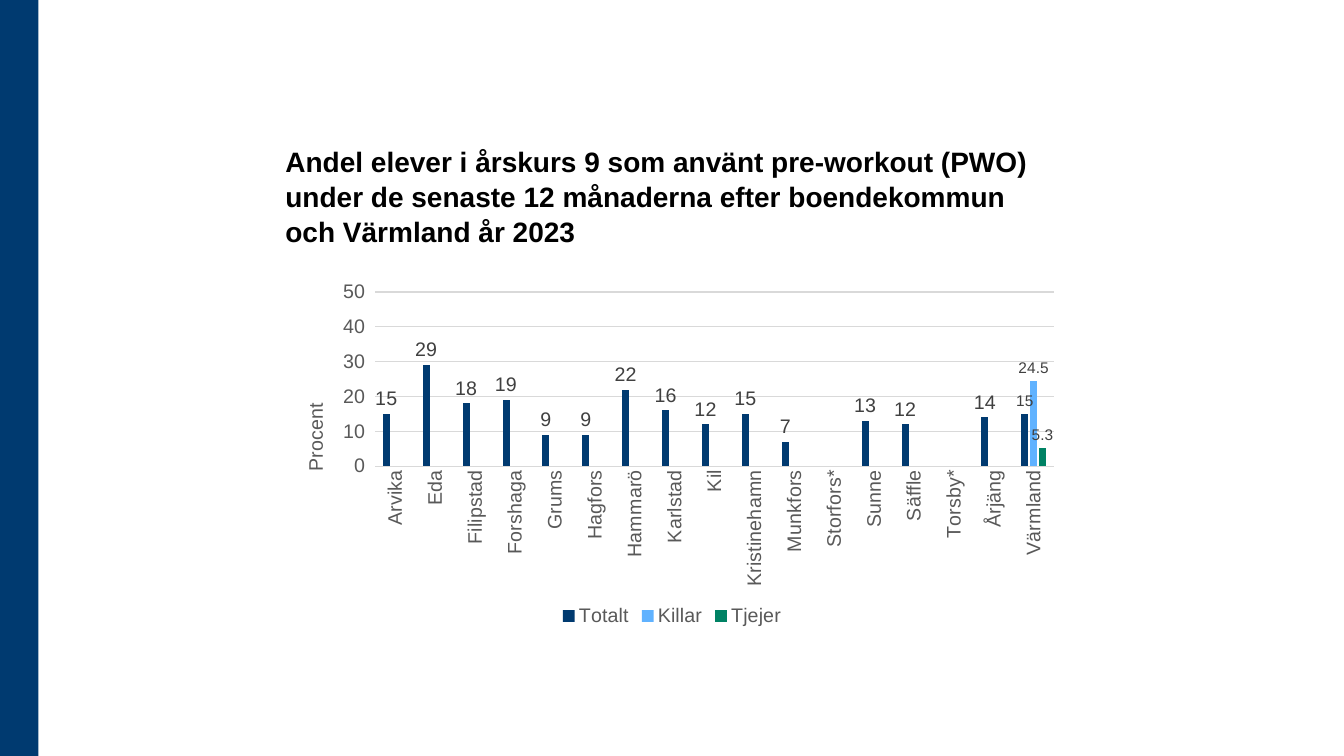
from dataclasses import dataclass

from lxml import etree
from pptx import Presentation
from pptx.chart.data import CategoryChartData
from pptx.dml.color import RGBColor
from pptx.enum.chart import XL_CHART_TYPE as ChartType
from pptx.enum.chart import XL_LABEL_POSITION as LabelPosition
from pptx.enum.chart import XL_LEGEND_POSITION as LegendPosition
from pptx.enum.chart import XL_TICK_MARK as TickMark
from pptx.enum.shapes import MSO_SHAPE
from pptx.enum.text import MSO_ANCHOR, MSO_AUTO_SIZE, PP_ALIGN
from pptx.oxml.ns import qn
from pptx.util import Inches, Pt


@dataclass(frozen=True)
class Theme:
    font: str = "Arial"
    navy: str = "003A70"
    sky: str = "60B2FF"
    green: str = "008264"
    black: str = "000000"
    axis_gray: str = "595959"
    label_gray: str = "404040"
    grid_gray: str = "D9D9D9"
    title_size: int = 20
    chart_size: int = 14
    small_size: int = 11


THEME = Theme()
LEFT, WIDTH = Inches(2.73), Inches(7.87)
TITLE = ("Andel elever i årskurs 9 som använt pre-workout (PWO) under de "
         "senaste 12 månaderna efter boendekommun och Värmland år 2023")
TOTAL_BY_PLACE = {
    "Arvika": 15, "Eda": 29, "Filipstad": 18, "Forshaga": 19, "Grums": 9,
    "Hagfors": 9, "Hammarö": 22, "Karlstad": 16, "Kil": 12,
    "Kristinehamn": 15, "Munkfors": 7, "Storfors*": None, "Sunne": 13,
    "Säffle": 12, "Torsby*": None, "Årjäng": 14, "Värmland": 15,
}


def format_font(font, size=THEME.chart_size, color=THEME.axis_gray, bold=False):
    font.name = THEME.font
    font.size = Pt(size)
    font.bold = bold
    font.color.rgb = RGBColor.from_string(color)


def write_text(frame, text, align=PP_ALIGN.LEFT, spacing=None, **font_format):
    frame.text = text
    para = frame.paragraphs[0]
    para.alignment = align
    para.line_spacing = spacing
    format_font(para.runs[0].font, **font_format)


def format_line(line, color=THEME.grid_gray):
    line.color.rgb = RGBColor.from_string(color)
    line.width = Pt(0.75)


def place_in_chart(parent, inner=False, **fractions):
    """Give a chart part a fixed place, as fractions of the chart area."""
    layout = parent.find(qn("c:layout"))
    if layout is None:
        layout = etree.Element(qn("c:layout"))
        parent.insert(0, layout)
    manual = etree.SubElement(layout, qn("c:manualLayout"))
    settings = {"layoutTarget": "inner"} if inner else {}
    settings |= {"xMode": "edge", "yMode": "edge", **fractions}
    for name, value in settings.items():
        etree.SubElement(manual, qn(f"c:{name}")).set("val", str(value))


def add_side_band(page, height):
    band = page.shapes.add_shape(MSO_SHAPE.RECTANGLE, 0, 0, Inches(0.38), height)
    band.shadow.inherit = False
    band.fill.solid()
    band.fill.fore_color.rgb = RGBColor.from_string(THEME.navy)
    band.line.fill.background()


def place_title(page):
    title = page.shapes.title
    title.left, title.top = LEFT, Inches(1.06)
    title.width, title.height = WIDTH, Inches(1.45)
    frame = title.text_frame
    frame.word_wrap = True
    frame.auto_size = MSO_AUTO_SIZE.NONE
    frame.vertical_anchor = MSO_ANCHOR.BOTTOM
    write_text(frame, TITLE, spacing=1.04, size=THEME.title_size,
               color=THEME.black, bold=True)


def format_series(series, color, label_size, number_format):
    series.format.fill.solid()
    series.format.fill.fore_color.rgb = RGBColor.from_string(color)
    series.invert_if_negative = False
    labels = series.data_labels
    labels.show_value = True
    labels.position = LabelPosition.OUTSIDE_END
    labels.number_format = number_format
    labels.number_format_is_linked = False
    format_font(labels.font, size=label_size, color=THEME.label_gray)


def format_category_axis(axis):
    axis.major_tick_mark = TickMark.NONE
    format_line(axis.format.line)
    format_font(axis.tick_labels.font)
    text_body = axis.tick_labels.font._element.getparent().getparent().getparent()
    text_body.find(qn("a:bodyPr")).set("rot", "-5400000")


def format_value_axis(axis):
    axis.minimum_scale, axis.maximum_scale, axis.major_unit = 0, 50, 10
    axis.major_tick_mark = TickMark.OUTSIDE
    axis.format.line.fill.background()
    format_line(axis.major_gridlines.format.line)
    axis.tick_labels.number_format = "0"
    axis.tick_labels.number_format_is_linked = False
    format_font(axis.tick_labels.font)
    frame = axis.axis_title.text_frame
    write_text(frame, "Procent")
    frame._txBody.find(qn("a:bodyPr")).set("rot", "-5400000")
    place_in_chart(axis.axis_title._element, x=0.03, y=0.35)


def add_share_chart(page):
    data = CategoryChartData()
    data.categories = list(TOTAL_BY_PLACE)
    only_last = [None] * (len(TOTAL_BY_PLACE) - 1)
    data.add_series("Totalt", TOTAL_BY_PLACE.values())
    data.add_series("Killar", only_last + [24.5])
    data.add_series("Tjejer", only_last + [5.3])
    chart = page.shapes.add_chart(ChartType.COLUMN_CLUSTERED, LEFT, Inches(2.72),
                                  WIDTH, Inches(3.54), data).chart
    format_font(chart.font, color=THEME.black)
    chart.has_title = False
    chart.has_legend = True
    chart.legend.position = LegendPosition.BOTTOM
    chart.legend.include_in_layout = False
    format_font(chart.legend.font)

    plot = chart.plots[0]
    plot.gap_width, plot.overlap = 219, -27
    plot.vary_by_categories = False
    total, boys, girls = plot.series
    format_series(total, THEME.navy, THEME.chart_size, "0")
    format_series(boys, THEME.sky, THEME.small_size, "General")
    format_series(girls, THEME.green, THEME.small_size, "General")
    county_label = total.points[len(only_last)].data_label
    format_font(county_label.font, size=THEME.small_size, color=THEME.label_gray)
    county_label.position = LabelPosition.OUTSIDE_END

    format_category_axis(chart.category_axis)
    format_value_axis(chart.value_axis)
    plot_area = chart._chartSpace.find(".//" + qn("c:plotArea"))
    place_in_chart(plot_area, inner=True, x=0.126, y=0.05, w=0.855, h=0.488)


def main():
    deck = Presentation()
    deck.slide_width, deck.slide_height = Inches(13.33), Inches(7.5)
    page = deck.slides.add_slide(deck.slide_layouts[5])
    add_side_band(page, deck.slide_height)
    place_title(page)
    add_share_chart(page)
    deck.save("out.pptx")


if __name__ == "__main__":
    main()
